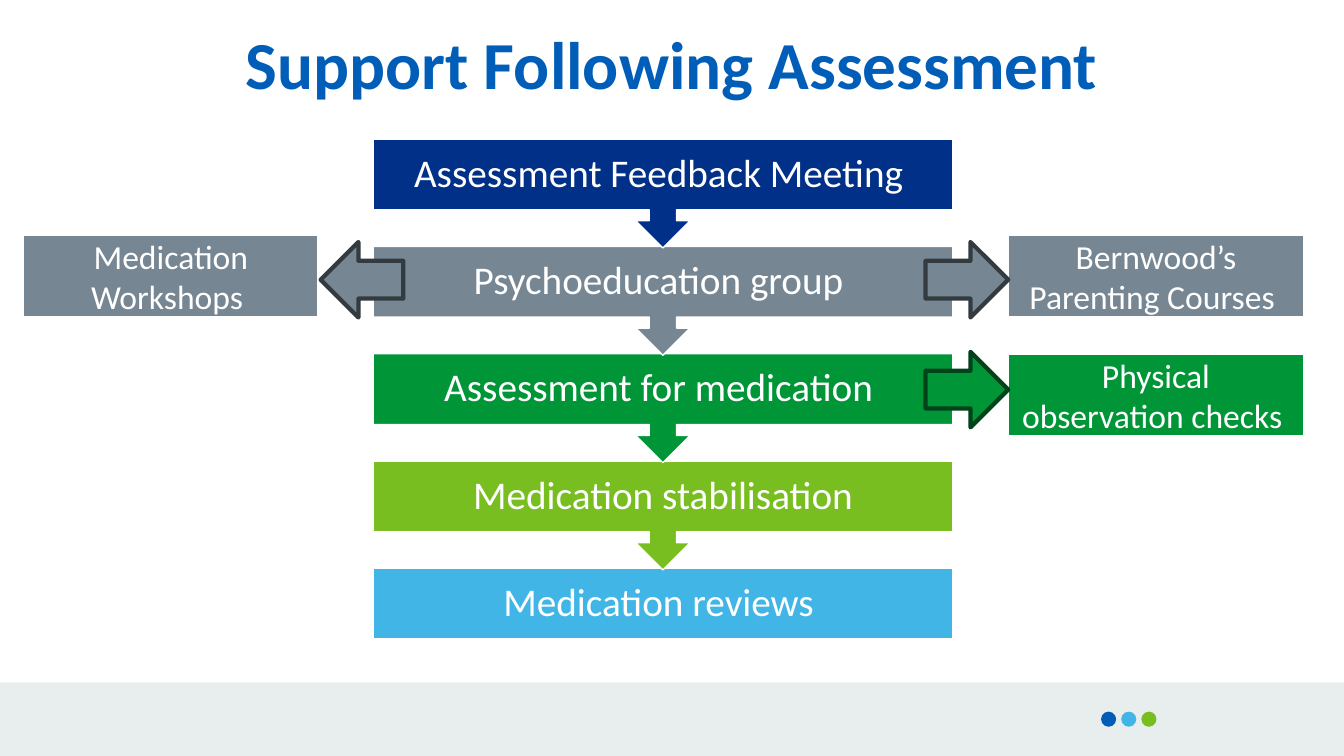
from pptx import Presentation
from pptx.dml.color import RGBColor
from pptx.enum.shapes import MSO_SHAPE
from pptx.enum.text import MSO_ANCHOR, PP_ALIGN
from pptx.util import Inches, Pt

WHITE = RGBColor(0xFF, 0xFF, 0xFF)
BLUE = RGBColor(0x00, 0x5E, 0xB8)
NAVY = RGBColor(0x00, 0x30, 0x87)
SKY = RGBColor(0x41, 0xB6, 0xE6)
GREY = RGBColor(0x76, 0x86, 0x92)
DARK_GREY = RGBColor(0x34, 0x3B, 0x40)
GREEN = RGBColor(0x00, 0x96, 0x38)
DARK_GREEN = RGBColor(0x00, 0x42, 0x19)
LIME = RGBColor(0x78, 0xBE, 0x20)
PALE = RGBColor(0xE8, 0xED, 0xEE)

STEP_LEFT, STEP_TOP, STEP_BOTTOM_TOP = 3.7, 1.38, 5.64
STEP_WIDTH, STEP_HEIGHT, CALLOUT_HEIGHT = 5.75, 0.7, 1.08


class FlowSlide:
    """Holds the slide and the shared style of its elements."""

    font = "Calibri"

    def __init__(self, presentation):
        self.slide = presentation.slides.add_slide(presentation.slide_layouts[5])

    def set_text(self, shape, text, size, color, bold=False, spacing=1.0, inset=None):
        frame = shape.text_frame
        frame.word_wrap = True
        frame.vertical_anchor = MSO_ANCHOR.MIDDLE
        if inset is not None:
            frame.margin_left = frame.margin_right = Inches(inset)
            frame.margin_top = frame.margin_bottom = Inches(inset)
        paragraph = frame.paragraphs[0]
        paragraph.text = text
        paragraph.alignment = PP_ALIGN.CENTER
        paragraph.line_spacing = spacing
        paragraph.font.name = self.font
        paragraph.font.size = Pt(size)
        paragraph.font.bold = bold
        paragraph.font.color.rgb = color

    def title(self, text):
        title = self.slide.shapes.title
        title.left, title.top = Inches(2.42), Inches(0.25)
        title.width, title.height = Inches(8.49), Inches(0.85)
        self.set_text(title, text, 48, BLUE, bold=True, spacing=0.9, inset=0)

    def shape(self, kind, left, top, width, height, fill, line=None, line_width=1):
        shape = self.slide.shapes.add_shape(
            kind, Inches(left), Inches(top), Inches(width), Inches(height))
        shape.shadow.inherit = False
        shape.fill.solid()
        shape.fill.fore_color.rgb = fill
        if line is None:
            shape.line.fill.background()
        else:
            shape.line.color.rgb = line
            shape.line.width = Pt(line_width)
        return shape

    def step(self, top, text, fill, last):
        kind = MSO_SHAPE.RECTANGLE if last else MSO_SHAPE.DOWN_ARROW_CALLOUT
        height = STEP_HEIGHT if last else CALLOUT_HEIGHT
        shape = self.shape(kind, STEP_LEFT, top, STEP_WIDTH, height, fill, WHITE)
        self.set_text(shape, text, 28, WHITE, spacing=0.9, inset=0.22)

    def side_box(self, left, top, text, fill):
        shape = self.shape(MSO_SHAPE.RECTANGLE, left, top, 2.93, 0.82, fill, WHITE, 1.5)
        self.set_text(shape, text, 24, WHITE)

    def side_arrow(self, kind, left, top, fill, line):
        self.shape(kind, left, top, 0.82, 0.75, fill, line, 3)


def main():
    presentation = Presentation()
    presentation.slide_width = Inches(13.33)
    presentation.slide_height = Inches(7.5)
    flow = FlowSlide(presentation)

    # Footer band with three dots
    flow.shape(MSO_SHAPE.RECTANGLE, 0, 6.77, 13.33, 0.73, PALE)
    for index, color in enumerate((BLUE, SKY, LIME)):
        flow.shape(MSO_SHAPE.OVAL, 10.92 + index * 0.2, 7.06, 0.15, 0.15, color)

    flow.title("Support Following Assessment")

    # Main steps, from the bottom up so each arrow tip lies on the next step
    steps = [
        ("Assessment Feedback Meeting ", NAVY),
        ("Psychoeducation group ", GREY),
        ("Assessment for medication ", GREEN),
        ("Medication stabilisation", LIME),
        ("Medication reviews ", SKY),
    ]
    last_row = len(steps) - 1
    pitch = (STEP_BOTTOM_TOP - STEP_TOP) / last_row
    for row, (text, fill) in reversed(list(enumerate(steps))):
        flow.step(STEP_TOP + row * pitch, text, fill, last=row == last_row)

    # Side branches: box position, text, arrow position, colours
    right, left = MSO_SHAPE.RIGHT_ARROW, MSO_SHAPE.LEFT_ARROW
    branches = [
        (0.23, 2.33, "Medication Workshops ", left, 3.18, 2.4, GREY, DARK_GREY),
        (10, 2.33, "Bernwood’s Parenting Courses ", right, 9.18, 2.4, GREY, DARK_GREY),
        (10, 3.51, "Physical observation checks ", right, 9.18, 3.49, GREEN, DARK_GREEN),
    ]
    for box_left, box_top, text, kind, arrow_left, arrow_top, fill, line in branches:
        flow.side_box(box_left, box_top, text, fill)
        flow.side_arrow(kind, arrow_left, arrow_top, fill, line)

    presentation.save("out.pptx")


if __name__ == "__main__":
    main()
